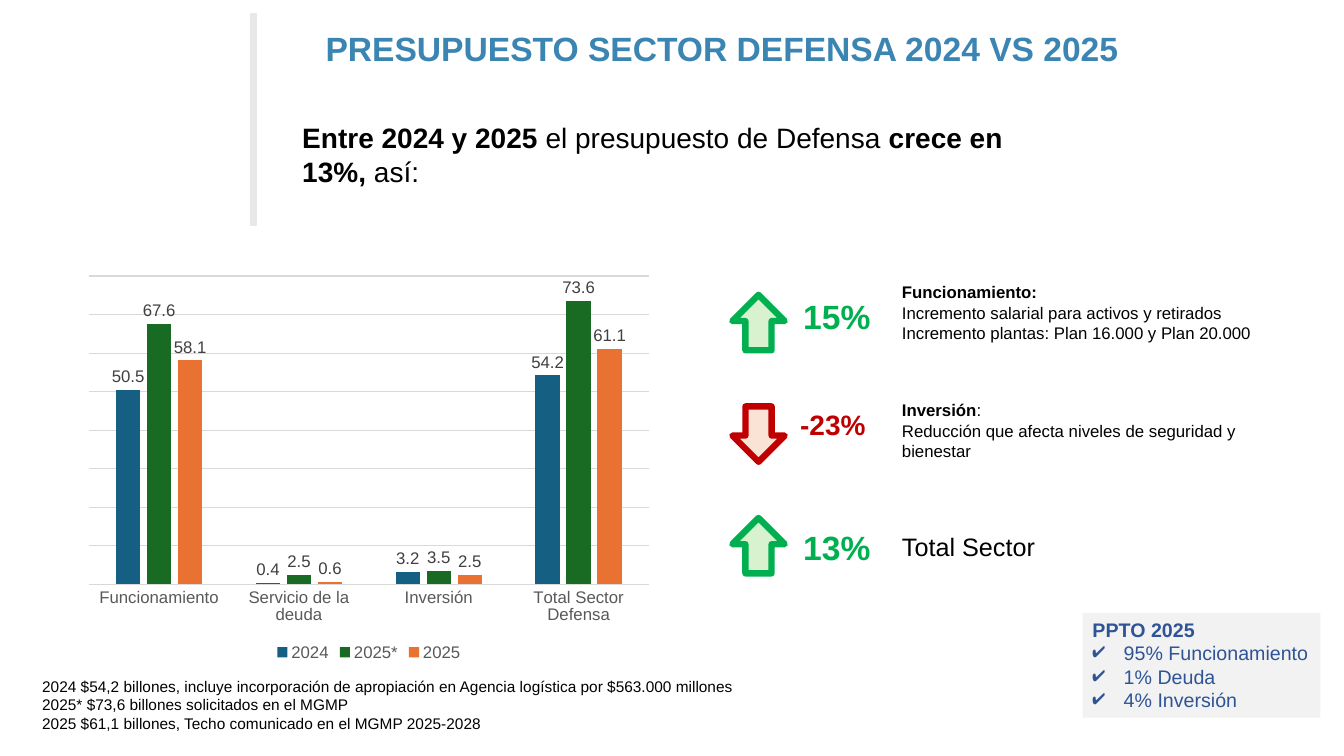
"""Defence budget slide: 2024 versus 2025 chart with explained changes."""
from lxml.etree import SubElement
from pptx import Presentation
from pptx.chart.data import CategoryChartData
from pptx.dml.color import RGBColor
from pptx.enum.chart import XL_CHART_TYPE, XL_LABEL_POSITION, XL_LEGEND_POSITION, XL_TICK_LABEL_POSITION, XL_TICK_MARK
from pptx.enum.shapes import MSO_SHAPE
from pptx.enum.text import MSO_ANCHOR, PP_ALIGN
from pptx.oxml.ns import qn
from pptx.util import Inches, Pt

FONT = "Arial"
CELL = 1 / 3
COLUMNS, ROWS = 40, 22.5
BLACK, GREEN, RED, NAVY, GRID = "000000", "00B050", "C00000", "2F5496", "D9D9D9"

TITLE = ["**PRESUPUESTO SECTOR DEFENSA 2024 VS 2025**"]
LEAD = ["**Entre 2024 y 2025 **el presupuesto de Defensa **crece en 13%, **así:"]
FOOTNOTES = [
    "2024 $54,2 billones, incluye incorporación de apropiación en Agencia logística por $563.000 millones",
    "2025* $73,6 billones solicitados en el MGMP",
    "2025 $61,1 billones, Techo comunicado en el MGMP 2025-2028",
]
SUMMARY = ["**PPTO 2025**", "95% Funcionamiento", "1% Deuda", "4% Inversión"]

CATEGORIES = ["Funcionamiento", "Servicio de la deuda", "Inversión", "Total Sector Defensa"]
SERIES = [
    ("2024", "156082", (50.5, 0.4, 3.2, 54.2)),
    ("2025*", "196B24", (67.6, 2.5, 3.5, 73.6)),
    ("2025", "E97132", (58.1, 0.6, 2.5, 61.1)),
]

CHANGES = [
    dict(figure="15%", size=24, color=GREEN, fill="D8F2CF", turn=270, figure_at=(23.61, 8.67),
         note=["**Funcionamiento:**", "Incremento salarial para activos y retirados",
               "Incremento plantas: Plan 16.000 y Plan 20.000"], note_size=12, note_top=8.25),
    dict(figure="-23%", size=20, color=RED, fill="FAE2D5", turn=90, figure_at=(23.52, 11.97),
         note=["**Inversión**:", "Reducción que afecta niveles de seguridad y bienestar"],
         note_size=12, note_top=11.76),
    dict(figure="13%", size=24, color=GREEN, fill="D8F2CF", turn=270, figure_at=(23.61, 15.54),
         note=["Total Sector"], note_size=18, note_top=15.66),
]
FIRST_ARROW, ARROW_STEP = 8.82, 3.32


def rgb(value):
    return RGBColor.from_string(value)


def place(*cells):
    return [Inches(cell * CELL) for cell in cells]


def style_font(font, size, color, bold=False):
    font.name, font.size, font.bold = FONT, Pt(size), bold
    font.color.rgb = rgb(color)


def add_bullet(para, color):
    properties = para._p.get_or_add_pPr()
    properties.set("marL", str(Inches(0.31)))
    properties.set("indent", str(-Inches(0.31)))
    SubElement(SubElement(properties, qn("a:buClr")), qn("a:srgbClr"), val=color)
    SubElement(properties, qn("a:buChar"), char="✔")


def write(box, lines, size, color=BLACK, align=PP_ALIGN.LEFT, spacing=None, margins=(0.1, 0.05), bullets=False):
    frame = box.text_frame
    frame.word_wrap = True
    frame.vertical_anchor = MSO_ANCHOR.TOP
    frame.margin_left = frame.margin_right = Inches(margins[0])
    frame.margin_top = frame.margin_bottom = Inches(margins[1])
    for index, line in enumerate(lines):
        para = frame.add_paragraph() if index else frame.paragraphs[0]
        para.alignment = align
        if spacing:
            para.line_spacing = spacing
        if bullets and index:
            add_bullet(para, color)
        for part, words in enumerate(line.split("**")):
            if words:
                span = para.add_run()
                span.text = words
                style_font(span.font, size, color, bold=part % 2 == 1)


def add_text(page, cells, lines, size, **format):
    write(page.shapes.add_textbox(*place(*cells)), lines, size, **format)


def add_block(page, kind, cells, fill, line=None):
    shape = page.shapes.add_shape(kind, *place(*cells))
    shape.shadow.inherit = False
    shape.fill.solid()
    shape.fill.fore_color.rgb = rgb(fill)
    if line:
        shape.line.color.rgb = rgb(line)
        shape.line.width = Pt(4.5)
    else:
        shape.line.fill.background()
    return shape


def add_budget_chart(page, cells):
    data = CategoryChartData(number_format="#,##0.0")
    data.categories = CATEGORIES
    for name, _, values in SERIES:
        data.add_series(name, values)
    chart = page.shapes.add_chart(XL_CHART_TYPE.COLUMN_CLUSTERED, *place(*cells), data).chart
    chart.has_title = False
    style_font(chart.font, 12, "595959")
    chart.has_legend = True
    chart.legend.position = XL_LEGEND_POSITION.BOTTOM
    chart.legend.include_in_layout = False
    style_font(chart.legend.font, 12, "595959")

    names = chart.category_axis
    names.major_tick_mark = names.minor_tick_mark = XL_TICK_MARK.NONE
    names.tick_label_position = XL_TICK_LABEL_POSITION.NEXT_TO_AXIS
    style_font(names.tick_labels.font, 12, "595959")
    amounts = chart.value_axis
    amounts.visible = False
    amounts.minimum_scale, amounts.maximum_scale, amounts.major_unit = 0, 80, 10
    amounts.has_major_gridlines = True
    for line in (names.format.line, amounts.major_gridlines.format.line):
        line.color.rgb = rgb(GRID)
        line.width = Pt(0.75)

    plot = chart.plots[0]
    plot.vary_by_categories = False
    plot.gap_width, plot.overlap = 219, -27
    for series, (_, color, _) in zip(plot.series, SERIES):
        series.format.fill.solid()
        series.format.fill.fore_color.rgb = rgb(color)
        labels = series.data_labels
        labels.show_value = True
        labels.number_format, labels.number_format_is_linked = "#,##0.0", False
        labels.position = XL_LABEL_POSITION.OUTSIDE_END
        style_font(labels.font, 12, "404040")


def add_change(page, row, change):
    cells = (21.75, FIRST_ARROW + row * ARROW_STEP, 1.65, 1.56)
    arrow = add_block(page, MSO_SHAPE.RIGHT_ARROW, cells, change["fill"], change["color"])
    arrow.rotation = change["turn"]
    add_text(page, (*change["figure_at"], 3, 1.5), [f"**{change['figure']}**"], change["size"], color=change["color"])
    add_text(page, (26.55, change["note_top"], 12, 2.5), change["note"], change["note_size"])


def main():
    deck = Presentation()
    deck.slide_width, deck.slide_height = place(COLUMNS, ROWS)
    page = deck.slides.add_slide(deck.slide_layouts[6])
    for row, change in enumerate(CHANGES):
        add_change(page, row, change)
    add_budget_chart(page, (2.31, 7.98, 17.34, 11.82))
    add_text(page, (8.7, 3.45, 23.34, 2.3), LEAD, 20)
    add_text(page, (6.99, 0.78, 29, 1.44), TITLE, 24, color="3B85B3",
             align=PP_ALIGN.CENTER, spacing=0.9, margins=(0.06, 0.06))
    add_text(page, (0.96, 20, 23.4, 2), FOOTNOTES, 11)
    summary = add_block(page, MSO_SHAPE.RECTANGLE, (32.22, 18.24, 7.08, 3.12), "F2F2F2")
    write(summary, SUMMARY, 14, color=NAVY, bullets=True)
    add_block(page, MSO_SHAPE.ROUNDED_RECTANGLE, (7.44, 0.39, 0.21, 6.33), "E8E8E8")
    deck.save("out.pptx")


if __name__ == "__main__":
    main()
